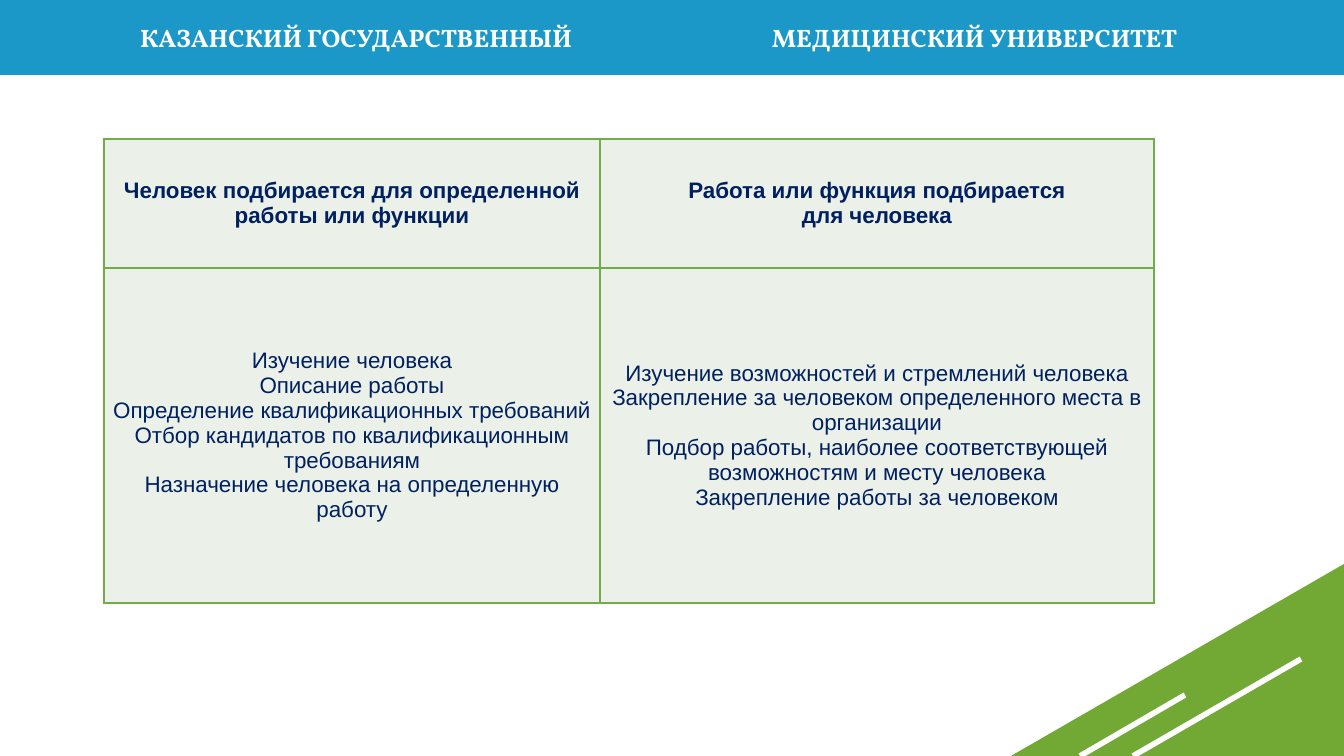
"""Builds a slide comparing two approaches to matching people and work."""
from lxml import etree
from pptx import Presentation
from pptx.dml.color import RGBColor
from pptx.enum.shapes import MSO_CONNECTOR as CONNECTOR, MSO_SHAPE as SHAPE
from pptx.enum.text import MSO_ANCHOR as ANCHOR, MSO_AUTO_SIZE as AUTO_SIZE, PP_ALIGN as ALIGN
from pptx.oxml import parse_xml
from pptx.oxml.ns import nsdecls, qn
from pptx.util import Emu, Pt

COLORS = {"band": "1B97C8", "corner": "71A934", "white": "FFFFFF",
          "border": "70AD47", "cell": "EBF1E9", "text": "002060"}
SLIDE_WIDTH, SLIDE_HEIGHT = 1344, 756
EMU_PER_PX = 12192000 / SLIDE_WIDTH


def px(*lengths):
    return [Emu(round(length * EMU_PER_PX)) for length in lengths]


def color(name):
    return RGBColor.from_string(COLORS[name])


presentation = Presentation()
presentation.slide_width, presentation.slide_height = px(SLIDE_WIDTH, SLIDE_HEIGHT)
slide = presentation.slides.add_slide(presentation.slide_layouts[6])
shapes = slide.shapes

band = shapes.add_shape(SHAPE.RECTANGLE, *px(0, 0, SLIDE_WIDTH, 75))
corner = shapes.add_shape(SHAPE.RIGHT_TRIANGLE, *px(1011, 564, 333, 192))
corner.element.spPr.find(qn("a:xfrm")).set("flipH", "1")
for shape, fill in [(band, "band"), (corner, "corner")]:
    shape.shadow.inherit = False
    shape.fill.solid()
    shape.fill.fore_color.rgb = color(fill)
    shape.line.fill.background()

for ends in [(1080, 756, 1185, 695), (1133, 756, 1301, 659)]:
    stripe = shapes.add_connector(CONNECTOR.STRAIGHT, *px(*ends))
    stripe.line.color.rgb = color("white")
    stripe.line.width = Pt(4)
    etree.SubElement(stripe.element.spPr, qn("a:effectLst"))

for left, words, alignment in [(92, "КАЗАНСКИЙ ГОСУДАРСТВЕННЫЙ", ALIGN.RIGHT),
                               (762, "МЕДИЦИНСКИЙ УНИВЕРСИТЕТ", ALIGN.LEFT)]:
    heading = shapes.add_textbox(*px(left, 17, 490, 40))
    frame = heading.text_frame
    frame.word_wrap = True
    frame.auto_size = AUTO_SIZE.SHAPE_TO_FIT_TEXT
    paragraph = frame.paragraphs[0]
    paragraph.text = words
    paragraph.alignment = alignment
    font = paragraph.font
    font.name, font.size, font.bold = "Vollkorn", Pt(18), True
    font.color.rgb = color("white")

rows = [
    [["Человек подбирается для определенной работы или функции"],
     ["Работа или функция подбирается", "для человека"]],
    [["Изучение человека",
      "Описание работы",
      "Определение квалификационных требований",
      "Отбор кандидатов по квалификационным требованиям",
      "Назначение человека на определенную работу"],
     ["Изучение возможностей и стремлений человека",
      "Закрепление за человеком определенного места в организации",
      "Подбор работы, наиболее соответствующей возможностям и месту человека",
      "Закрепление работы за человеком"]],
]
table = shapes.add_table(2, 2, *px(104, 139, 1050, 464)).table
table.first_row = table.horz_banding = False
for column, width in zip(table.columns, px(496, 554)):
    column.width = width
for row, height in zip(table.rows, px(129, 335)):
    row.height = height

for row_index, row_texts in enumerate(rows):
    for column_index, lines in enumerate(row_texts):
        cell = table.cell(row_index, column_index)
        cell.margin_left, cell.margin_right, cell.margin_top, cell.margin_bottom = px(7, 7, 0, 0)
        cell.vertical_anchor = ANCHOR.MIDDLE
        properties = cell._tc.get_or_add_tcPr()
        for side in ("lnL", "lnR", "lnT", "lnB"):
            properties.append(parse_xml(
                f'<a:{side} {nsdecls("a")} w="{Pt(1)}"><a:solidFill>'
                f'<a:srgbClr val="{COLORS["border"]}"/></a:solidFill></a:{side}>'))
        cell.fill.solid()
        cell.fill.fore_color.rgb = color("cell")
        cell.text_frame.text = "\n".join(lines)
        for paragraph in cell.text_frame.paragraphs:
            paragraph.alignment = ALIGN.CENTER
            font = paragraph.font
            font.name, font.size, font.bold = "Arial", Pt(16), row_index == 0
            font.color.rgb = color("text")

presentation.save("out.pptx")
